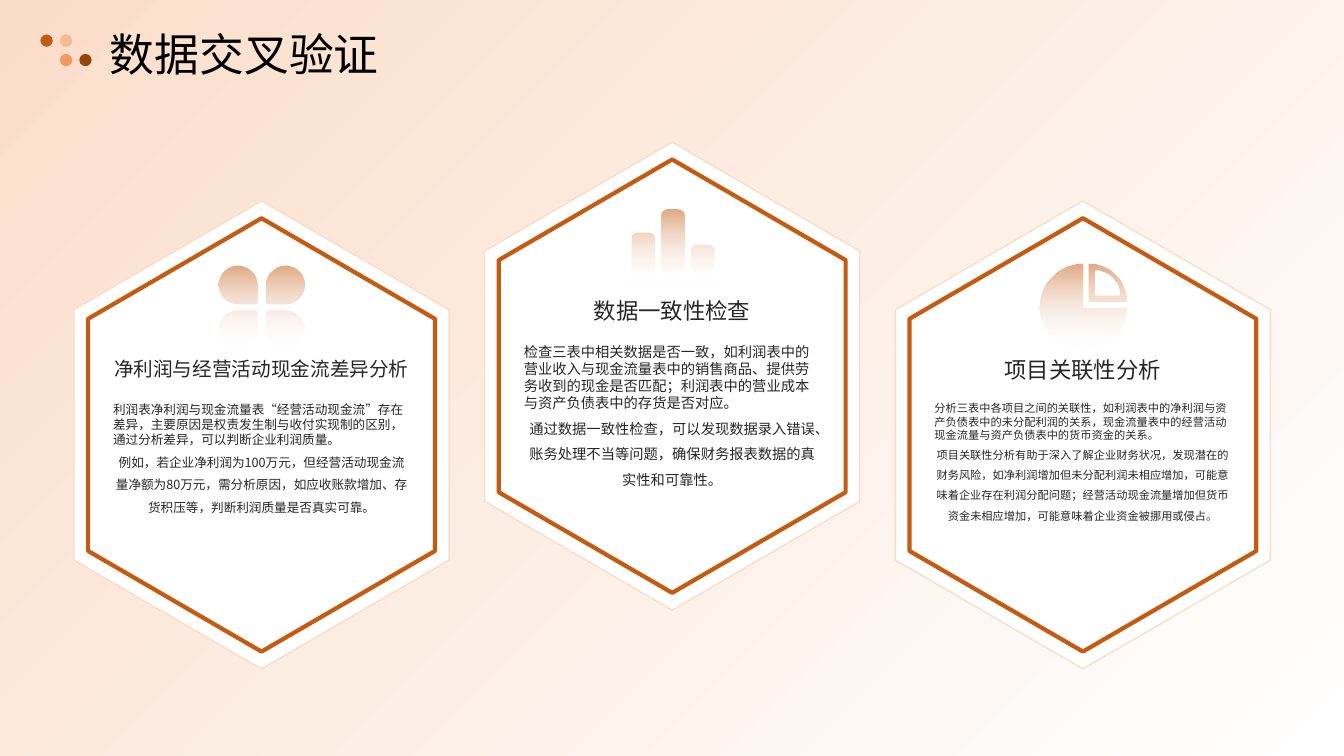
from lxml.etree import SubElement
from pptx import Presentation
from pptx.dml.color import RGBColor
from pptx.enum.shapes import MSO_SHAPE
from pptx.enum.text import MSO_ANCHOR, PP_ALIGN
from pptx.oxml.ns import qn
from pptx.util import Cm, Pt

COLORS = {
    "white": "FFFFFF",
    "pale": "FADDC9",
    "peach": "F6BA92",
    "orange": "F1985C",
    "rust": "C55A11",
    "brown": "94430D",
    "text": "262626",
    "black": "000000",
}
RGB = {name: RGBColor.from_string(value) for name, value in COLORS.items()}
FONT = "Noto Sans CJK SC"
CORNERS = [
    (0, 0, (0, 1), (1, 0)),
    (1, 0, (-1, 0), (0, 1)),
    (1, 1, (0, -1), (-1, 0)),
    (0, 1, (1, 0), (0, -1)),
]


def rounded_corners(left, top, width, height, radii):
    outline = []
    for (right, bottom, entry, leave), radius in zip(CORNERS, radii):
        x, y = left + right * width, top + bottom * height
        reach = [(entry, 1), (entry, 0.45), (leave, 0.45), (leave, 1)] if radius else [(entry, 0)]
        outline.append([(x + dx * radius * part, y + dy * radius * part) for (dx, dy), part in reach])
    return outline


def add_text(left, top, width, height, anchor, size, color, paragraphs):
    box = page.shapes.add_textbox(Cm(left), Cm(top), Cm(width), Cm(height))
    frame = box.text_frame
    frame_format = {
        "word_wrap": True, "vertical_anchor": anchor,
        "margin_left": 0, "margin_right": 0, "margin_top": 0, "margin_bottom": 0,
    }
    for name, value in frame_format.items():
        setattr(frame, name, value)
    for index, (text, alignment, spacing) in enumerate(paragraphs):
        para = frame.add_paragraph() if index else frame.paragraphs[0]
        para.alignment = alignment
        para.line_spacing = spacing
        span = para.add_run()
        span.text = text
        for name, value in {"size": Pt(size), "name": FONT}.items():
            setattr(span.font, name, value)
        span.font.color.rgb = RGB[color]
        SubElement(span.font._element, qn("a:ea"), typeface=FONT)


petal, tip = 0.49, 0.07
flower = [
    rounded_corners(left, top, 0.98, 0.98, [tip if corner == inner else petal for corner in range(4)])
    for left, top, inner in [(-1.08, -4.27, 2), (0.1, -4.27, 3), (-1.08, -3.15, 1), (0.1, -3.15, 0)]
]

bars = [rounded_corners(-1.08, -2.41, 2.16, 0.18, [0.09] * 4)]
for index, height in enumerate([1.01, 1.59, 0.71]):
    bars.append(rounded_corners(-1.03 + 0.74 * index, -2.62 - height, 0.59, height, [0.15] * 4))

disc = rounded_corners(-1.09, -4.31, 2.18, 2.18, [1.09] * 4)
disc[1] = [(0, -3.22)]
pie = [
    disc,
    rounded_corners(0.13, -4.31, 0.96, 0.95, [0, 0.95, 0, 0]),
    rounded_corners(0.28, -4.13, 0.63, 0.61, [0, 0.61, 0, 0]),
]

CARDS = [
    (10.96, flower, 14, "净利润与经营活动现金流差异分析", 9, [
        "利润表净利润与现金流量表“经营活动现金流”存在差异，主要原因是权责发生制与收付实现制的区别，通过分析差异，可以判断企业利润质量。",
        "例如，若企业净利润为100万元，但经营活动现金流量净额为80万元，需分析原因，如应收账款增加、存货积压等，判断利润质量是否真实可靠。",
    ]),
    (9.48, bars, 16, "数据一致性检查", 10.2, [
        "检查三表中相关数据是否一致，如利润表中的营业收入与现金流量表中的销售商品、提供劳务收到的现金是否匹配；利润表中的营业成本与资产负债表中的存货是否对应。",
        "通过数据一致性检查，可以发现数据录入错误、账务处理不当等问题，确保财务报表数据的真实性和可靠性。",
    ]),
    (10.96, pie, 16, "项目关联性分析", 8, [
        "分析三表中各项目之间的关联性，如利润表中的净利润与资产负债表中的未分配利润的关系，现金流量表中的经营活动现金流量与资产负债表中的货币资金的关系。",
        "项目关联性分析有助于深入了解企业财务状况，发现潜在的财务风险，如净利润增加但未分配利润未相应增加，可能意味着企业存在利润分配问题；经营活动现金流量增加但货币资金未相应增加，可能意味着企业资金被挪用或侵占。",
    ]),
]
HEXAGONS = [(11.79, 9.45, "pale", 1), (10.92, 8.74, "rust", 3)]

deck = Presentation()
deck.slide_width, deck.slide_height = Cm(33.87), Cm(19.05)
page = deck.slides.add_slide(deck.slide_layouts[6])

backdrop = page.shapes.add_shape(MSO_SHAPE.RECTANGLE, 0, 0, deck.slide_width, deck.slide_height)
backdrop.shadow.inherit = False
backdrop.line.fill.background()
backdrop.fill.gradient()
backdrop.fill.gradient_angle = 135
for stop, color in zip(backdrop.fill.gradient_stops, ["white", "pale"]):
    stop.color.rgb = RGB[color]

for index, (middle, icon_outlines, title_size, title, body_size, body) in enumerate(CARDS):
    center = 6.59 + 10.35 * index
    for width, height, color, weight in HEXAGONS:
        hexagon = page.shapes.add_shape(
            MSO_SHAPE.HEXAGON, Cm(center - width / 2), Cm(middle - height / 2), Cm(width), Cm(height))
        hexagon.rotation = 90
        hexagon.adjustments[0] = 0.29
        hexagon.shadow.inherit = False
        hexagon.fill.solid()
        hexagon.fill.fore_color.rgb = RGB["white"]
        hexagon.line.color.rgb = RGB[color]
        hexagon.line.width = Pt(weight)

    builder = None
    for outline in icon_outlines:
        points = [(Cm(center + x), Cm(middle + y)) for corner in outline for x, y in corner]
        if builder is None:
            builder = page.shapes.build_freeform(*points[0])
        else:
            builder.move_to(*points[0])
        builder.add_line_segments(points[1:], close=True)
    icon = builder.convert_to_shape()
    nodes = iter(list(icon._element.iter(qn("a:moveTo"), qn("a:lnTo"))))
    for outline in icon_outlines:
        for corner in outline:
            steps = [next(nodes) for point in corner][1:]
            if steps:
                curve = steps[0].makeelement(qn("a:cubicBezTo"))
                steps[0].addprevious(curve)
                for step in steps:
                    curve.append(step[0])
                    step.getparent().remove(step)
    icon.shadow.inherit = False
    icon.line.fill.background()
    icon.fill.gradient()
    icon.fill.gradient_angle = 270
    for stop, color in zip(icon.fill.gradient_stops, ["rust", "white"]):
        stop.color.rgb = RGB[color]
    for tint, alpha in zip(icon._element.spPr.iter(qn("a:srgbClr")), ["53000", "0"]):
        SubElement(tint, qn("a:alpha"), val=alpha)

    add_text(center - 3.74, middle - 2.46, 7.48, 1.42, MSO_ANCHOR.MIDDLE, title_size, "text",
             [(title, PP_ALIGN.CENTER, 1.3)])
    add_text(center - 3.74, middle - 0.84, 7.48, 4.11, MSO_ANCHOR.TOP, body_size, "text",
             list(zip(body, [PP_ALIGN.LEFT, PP_ALIGN.CENTER], [1.0, 1.5])))

add_text(2.77, 0.61, 30.07, 1.19, MSO_ANCHOR.MIDDLE, 32, "black",
         [("数据交叉验证", PP_ALIGN.LEFT, 1.2)])

for index, color in enumerate(["rust", "peach", "pale", "pale", "orange", "brown"]):
    row, column = divmod(index, 3)
    dot = page.shapes.add_shape(
        MSO_SHAPE.OVAL, Cm(1.02 + 0.49 * column), Cm(0.87 + 0.49 * row), Cm(0.31), Cm(0.31))
    dot.shadow.inherit = False
    dot.fill.solid()
    dot.fill.fore_color.rgb = RGB[color]
    dot.line.fill.background()

deck.save("out.pptx")
